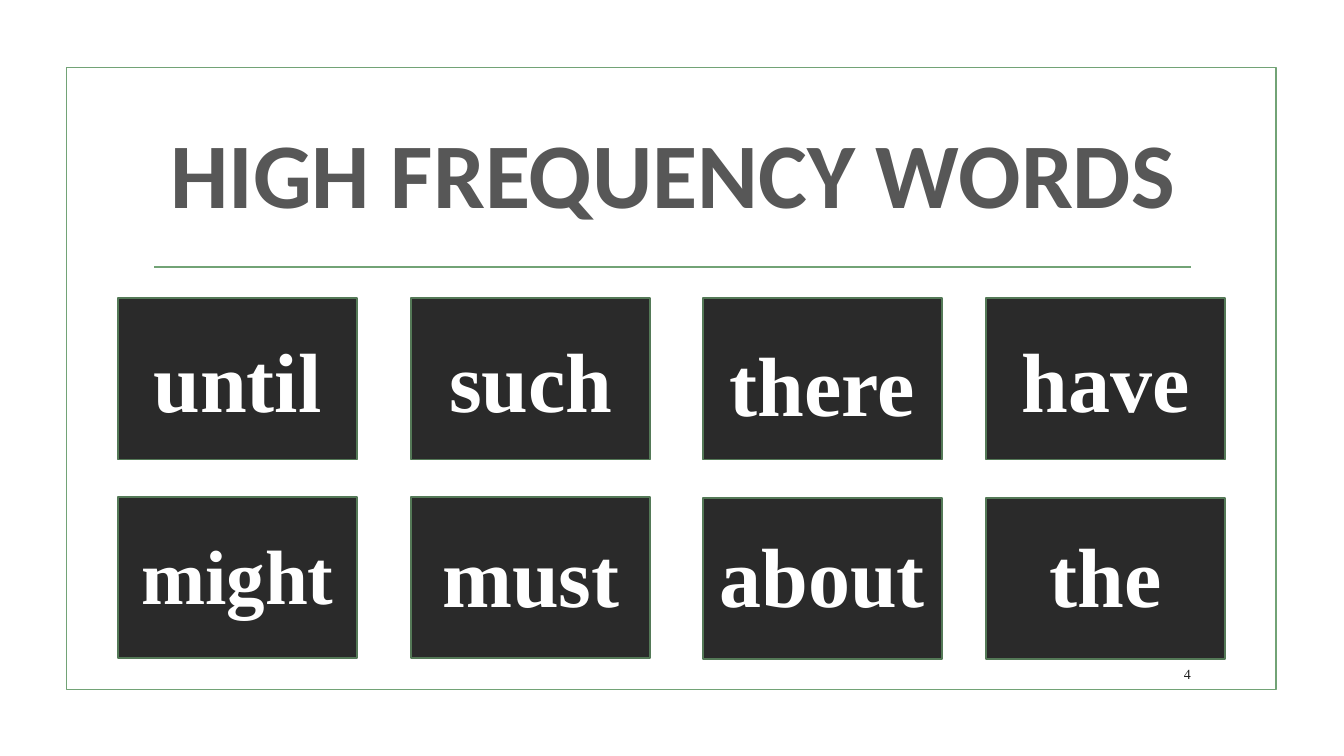
from dataclasses import dataclass

from lxml.etree import SubElement
from pptx import Presentation
from pptx.dml.color import RGBColor
from pptx.enum.shapes import MSO_CONNECTOR, MSO_SHAPE
from pptx.enum.text import MSO_ANCHOR, PP_ALIGN
from pptx.oxml.ns import qn
from pptx.util import Emu, Pt

PX = 9144  # 100 px to the inch


@dataclass(frozen=True)
class Theme:
    frame: str = "72A376"
    card: str = "2A2A2A"
    card_edge: str = "547957"
    title: str = "575757"
    word: str = "FFFFFF"
    number: str = "1F1F1F"
    title_font: str = "Calibri"
    body_font: str = "Times New Roman"
    title_size: int = 66
    word_size: int = 60
    long_word_size: int = 55
    number_size: int = 10
    line_width: float = 1.25


class SlideBuilder:
    def __init__(self, slide, theme):
        self.shapes = slide.shapes
        self.theme = theme

    def style_line(self, line, color):
        line.color.rgb = RGBColor.from_string(color)
        line.width = Pt(self.theme.line_width)

    def box(self, left, top, width, height, edge, fill=None):
        sp = self.shapes.add_shape(
            MSO_SHAPE.RECTANGLE, *(Emu(v * PX) for v in (left, top, width, height)))
        sp.shadow.inherit = False
        if fill:
            sp.fill.solid()
            sp.fill.fore_color.rgb = RGBColor.from_string(fill)
        else:
            sp.fill.background()
        self.style_line(sp.line, edge)

    def rule(self, left, right, y):
        line = self.shapes.add_connector(
            MSO_CONNECTOR.STRAIGHT, *(Emu(v * PX) for v in (left, y, right, y)))
        SubElement(line._element.spPr, qn("a:effectLst"))
        self.style_line(line.line, self.theme.frame)

    def text(self, text, left, top, width, height, size, color, font=None,
             bold=True, align=PP_ALIGN.CENTER, anchor=MSO_ANCHOR.MIDDLE, spacing=1.0):
        sp = self.shapes.add_textbox(*(Emu(v * PX) for v in (left, top, width, height)))
        tf = sp.text_frame
        tf.word_wrap = True
        tf.vertical_anchor = anchor
        tf.text = text
        p = tf.paragraphs[0]
        p.alignment = align
        p.line_spacing = spacing
        r = p.runs[0]
        r.font.name = font or self.theme.body_font
        r.font.size = Pt(size)
        r.font.bold = bold
        r.font.color.rgb = RGBColor.from_string(color)


def main():
    prs = Presentation()
    prs.slide_width, prs.slide_height = Emu(1333 * PX), Emu(750 * PX)
    theme = Theme()
    s = SlideBuilder(prs.slides.add_slide(prs.slide_layouts[6]), theme)

    s.box(66, 67, 1200, 617, theme.frame)
    s.rule(153, 1181, 265)
    s.text("4", 1132, 653, 59, 31, theme.number_size, theme.number,
           bold=False, align=PP_ALIGN.RIGHT)
    s.text("HIGH FREQUENCY WORDS", 75, 108, 1185, 138, theme.title_size,
           theme.title, font=theme.title_font, spacing=0.9)

    card_width, card_height = 237, 160
    columns = (117, 408, 697, 978)
    # Per row: card tops, then each word with the top of its text
    rows = (
        ((296, 296, 296, 296),
         (("until", 320), ("such", 320), ("there", 324), ("have", 320))),
        ((493, 493, 494, 494),
         (("might", 517), ("must", 513), ("about", 513), ("the", 513))),
    )
    for card_tops, words in rows:
        for left, card_top, (word, word_top) in zip(columns, card_tops, words):
            size, height = theme.word_size, 111
            if word == "might":
                size, height = theme.long_word_size, 103
            inset = 0 if len(word) == 5 and word != "until" else 20
            s.box(left, card_top, card_width, card_height, theme.card_edge, theme.card)
            s.text(word, left + inset, word_top, card_width - 2 * inset, height,
                   size, theme.word, anchor=MSO_ANCHOR.BOTTOM)

    prs.save("out.pptx")


if __name__ == "__main__":
    main()
